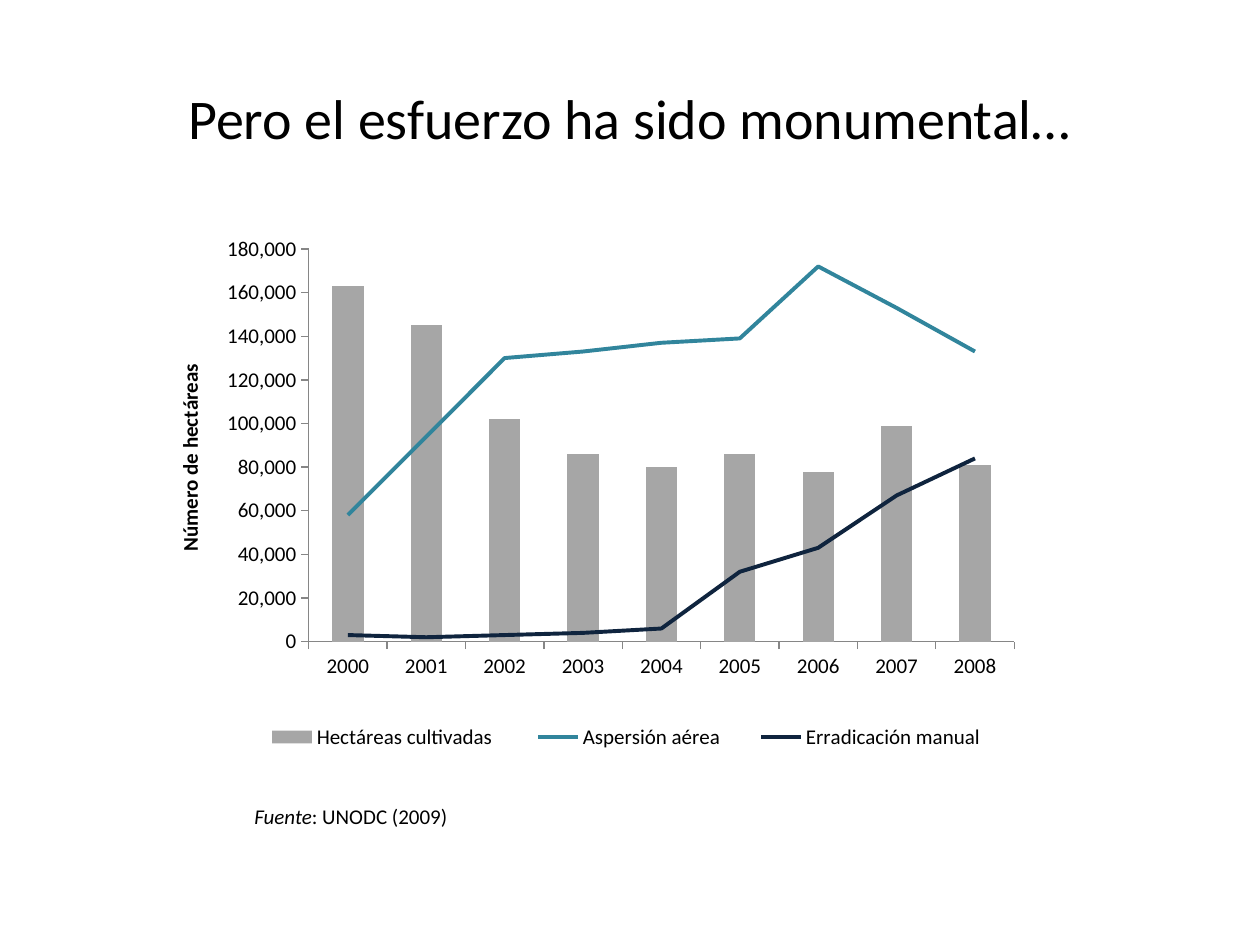
from copy import deepcopy
from pptx import Presentation
from pptx.chart.data import CategoryChartData
from pptx.dml.color import RGBColor
from pptx.enum.chart import XL_CHART_TYPE, XL_LEGEND_POSITION, XL_MARKER_STYLE, XL_TICK_MARK
from pptx.enum.text import MSO_ANCHOR, PP_ALIGN
from pptx.oxml import parse_xml
from pptx.oxml.ns import nsdecls, qn
from pptx.util import Inches, Pt

BLACK = RGBColor(0, 0, 0)
GREY = RGBColor(0xA6, 0xA6, 0xA6)
RULE = RGBColor(0x86, 0x86, 0x86)
TEAL = RGBColor(0x31, 0x85, 0x9C)
NAVY = RGBColor(0x0F, 0x24, 0x3E)

YEARS = [str(year) for year in range(2000, 2009)]
ROWS = [
    ("Hectáreas cultivadas ", GREY, (163, 145, 102, 86, 80, 86, 78, 99, 81)),
    ("Aspersión aérea", TEAL, (58, 94, 130, 133, 137, 139, 172, 153, 133)),
    ("Erradicación manual", NAVY, (3, 2, 3, 4, 6, 32, 43, 67, 84)),
]


def layout(x, y, w, h, inner=False):
    target = '<c:layoutTarget val="inner"/>' if inner else ""
    sides = "".join(f'<c:{tag} val="{num}"/>' for tag, num in zip("xywh", (x, y, w, h)))
    return parse_xml(
        f'<c:layout {nsdecls("c")}><c:manualLayout>{target}<c:xMode val="edge"/>'
        f'<c:yMode val="edge"/>{sides}</c:manualLayout></c:layout>'
    )


def drop(node, tag):
    for old in node.findall(qn(tag)):
        node.remove(old)


class Deck:
    font = "Calibri"
    small = Pt(12)
    large = Pt(32)

    def __init__(self):
        self.show = Presentation()
        self.show.slide_width = Inches(10)
        self.show.slide_height = Inches(7.5)
        self.slide = self.show.slides.add_slide(self.show.slide_layouts[6])

    def box(self, x, y, w, h):
        wide, high = self.show.slide_width, self.show.slide_height
        return [round(n) for n in (x * wide, y * high, w * wide, h * high)]

    def style(self, font, size):
        font.name, font.size = self.font, size
        font.color.rgb = BLACK

    def text(self, area, parts, size, align=PP_ALIGN.LEFT, anchor=MSO_ANCHOR.TOP):
        frame = self.slide.shapes.add_textbox(*self.box(*area)).text_frame
        frame.word_wrap = True
        frame.vertical_anchor = anchor
        para = frame.paragraphs[0]
        para.alignment = align
        self.style(para.font, size)
        for words, slant in parts:
            run = para.add_run()
            run.text = words
            if slant:
                run.font.italic = True

    def combo(self, area, rows, title):
        data = CategoryChartData(number_format="#,##0")
        data.categories = YEARS
        for name, _, vals in rows:
            data.add_series(name, [val * 1000 for val in vals])
        chart = self.slide.shapes.add_chart(
            XL_CHART_TYPE.COLUMN_CLUSTERED, *self.box(*area), data
        ).chart
        self.style(chart.font, self.small)
        chart.has_title = False
        bars = chart.plots[0]
        bars.gap_width = 150
        bars.vary_by_categories = False
        self.split(chart)
        self.paint(chart, [color for _, color, _ in rows])
        self.axes(chart, title)
        chart.has_legend = True
        legend = chart.legend
        legend.position = XL_LEGEND_POSITION.BOTTOM
        legend.include_in_layout = False
        drop(legend._element, "c:layout")
        spot = legend._element.find(qn("c:overlay"))
        spot.addprevious(layout(0.08, 0.85, 0.88, 0.09))

    def split(self, chart):
        area = chart._chartSpace.chart.plotArea
        drop(area, "c:layout")
        area.insert(0, layout(0.16, 0.05, 0.8, 0.68, True))
        bars = area.find(qn("c:barChart"))
        lines = parse_xml(
            f'<c:lineChart {nsdecls("c")}><c:grouping val="standard"/>'
            '<c:varyColors val="0"/><c:marker val="1"/></c:lineChart>'
        )
        mark = lines.find(qn("c:marker"))
        for ser in bars.findall(qn("c:ser"))[1:]:
            drop(ser, "c:invertIfNegative")
            mark.addprevious(ser)
        for axis in bars.findall(qn("c:axId")):
            lines.append(deepcopy(axis))
        bars.addnext(lines)

    def paint(self, chart, colors):
        bars, lines = chart.plots
        fill = bars.series[0].format.fill
        fill.solid()
        fill.fore_color.rgb = colors[0]
        for ser, color in zip(lines.series, colors[1:]):
            ser.format.line.color.rgb = color
            ser.format.line.width = Pt(2.25)
            ser.marker.style = XL_MARKER_STYLE.NONE
            ser.smooth = False

    def axes(self, chart, title):
        for axis in (chart.category_axis, chart.value_axis):
            axis.has_major_gridlines = False
            axis.major_tick_mark = XL_TICK_MARK.OUTSIDE
            axis.format.line.color.rgb = RULE
            self.style(axis.tick_labels.font, self.small)
        axis = chart.value_axis
        axis.minimum_scale, axis.maximum_scale = 0, 180000
        axis.major_unit = 20000
        axis.tick_labels.number_format = "#,##0"
        axis.tick_labels.number_format_is_linked = False
        para = axis.axis_title.text_frame.paragraphs[0]
        para.add_run().text = title
        self.style(para.font, self.small)
        para.font.bold = True


def main():
    deck = Deck()
    deck.combo((0.133, 0.233, 0.7, 0.611), ROWS, "Número de hectáreas")
    deck.text((0.192, 0.844, 0.204, 0.04),
              [("Fuente", True), (": UNODC (2009)", False)], deck.small)
    deck.text((0.05, 0.04, 0.9, 0.167),
              [("Pero el esfuerzo ha sido monumental…", False)],
              deck.large, PP_ALIGN.CENTER, MSO_ANCHOR.MIDDLE)
    deck.show.save("out.pptx")


if __name__ == "__main__":
    main()
